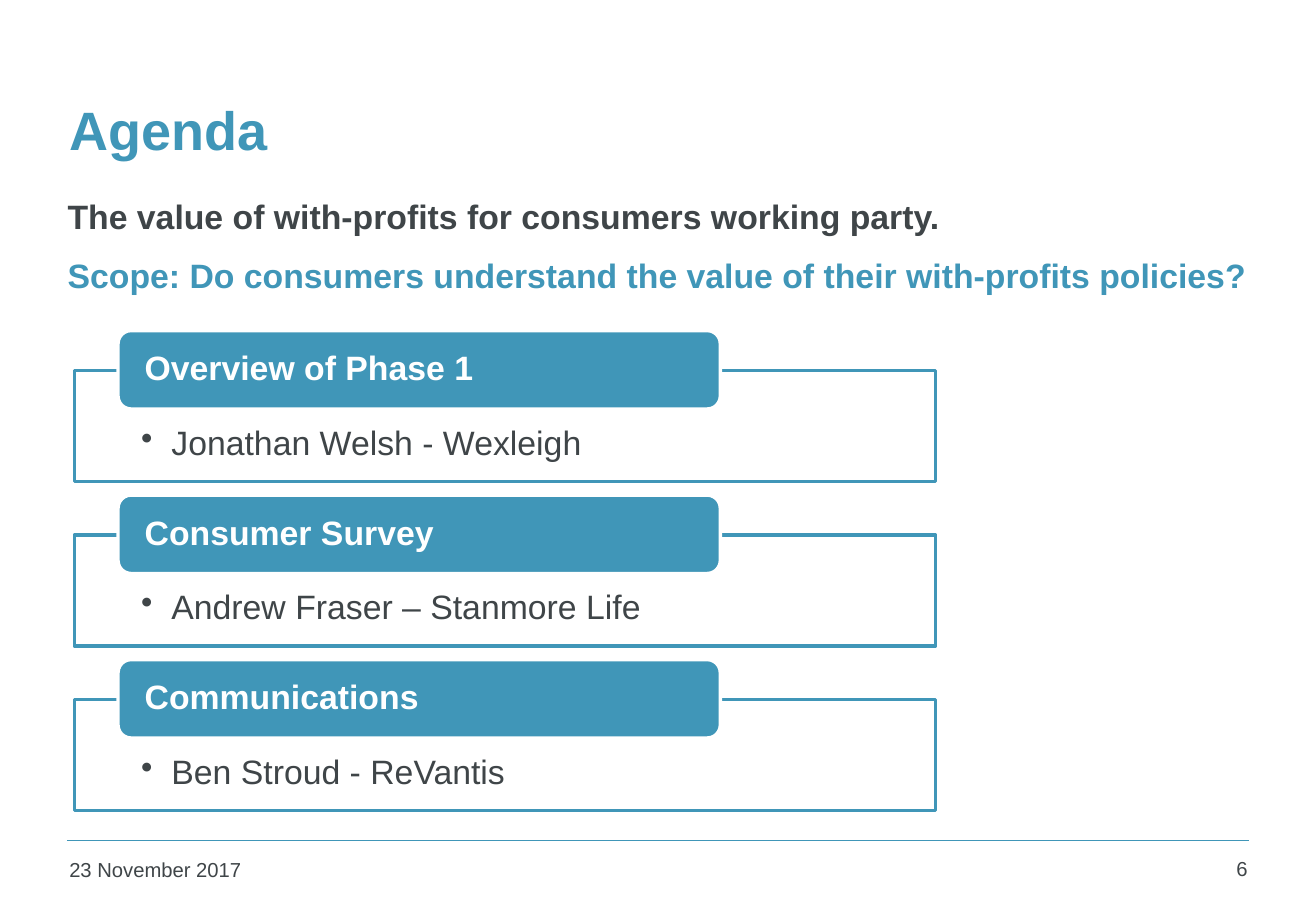
from dataclasses import dataclass

from lxml import etree
from pptx import Presentation
from pptx.dml.color import RGBColor
from pptx.enum.shapes import MSO_CONNECTOR, MSO_SHAPE
from pptx.enum.text import MSO_ANCHOR, PP_ALIGN
from pptx.oxml.ns import qn
from pptx.util import Pt

LINE = MSO_CONNECTOR.STRAIGHT
RECT, ROUND_RECT = MSO_SHAPE.RECTANGLE, MSO_SHAPE.ROUNDED_RECTANGLE
TOP, MIDDLE = MSO_ANCHOR.TOP, MSO_ANCHOR.MIDDLE
LEFT, RIGHT = PP_ALIGN.LEFT, PP_ALIGN.RIGHT


@dataclass(frozen=True)
class Theme:
    font: str = "Arial"
    accent: RGBColor = RGBColor(0x40, 0x96, 0xB8)
    ink: RGBColor = RGBColor(0x3F, 0x45, 0x48)
    white: RGBColor = RGBColor(0xFF, 0xFF, 0xFF)
    title: int = 32
    body: int = 20
    footer: int = 12


def add_text(tf, text, *, theme, size, color, bold=False, align=LEFT,
             before=0, spacing=1.0, bullet_indent=0, first=True):
    p = tf.paragraphs[0] if first else tf.add_paragraph()
    p.alignment = align
    p.space_before = Pt(before)
    p.line_spacing = spacing
    if bullet_indent:
        pPr = p._p.get_or_add_pPr()
        pPr.set("marL", str(Pt(bullet_indent)))
        pPr.set("indent", str(-Pt(bullet_indent)))
        etree.SubElement(pPr, qn("a:buChar"), char="•")
    r = p.add_run()
    r.text = text
    r.font.name = theme.font
    r.font.size = Pt(size)
    r.font.bold = bold
    r.font.color.rgb = color


class SlideBuilder:
    def __init__(self, slide, theme):
        self.s = slide
        self.theme = theme

    def frame(self, sp, insets, anchor):
        tf = sp.text_frame
        tf.word_wrap = True
        tf.vertical_anchor = anchor
        tf.margin_left, tf.margin_top, tf.margin_right, tf.margin_bottom = map(Pt, insets)
        return tf

    def text_box(self, x, y, w, h, paragraphs, anchor=TOP):
        sp = self.s.shapes.add_textbox(Pt(x), Pt(y), Pt(w), Pt(h))
        tf = self.frame(sp, (7.2, 3.6, 7.2, 3.6), anchor)
        for i, (text, fmt) in enumerate(paragraphs):
            add_text(tf, text, theme=self.theme, first=i == 0, **fmt)

    def box(self, kind, x, y, w, h, fill, line, text, insets, anchor, **fmt):
        sp = self.s.shapes.add_shape(kind, Pt(x), Pt(y), Pt(w), Pt(h))
        sp.shadow.inherit = False
        sp.fill.solid()
        sp.fill.fore_color.rgb = fill
        sp.line.color.rgb = line
        sp.line.width = Pt(2)
        tf = self.frame(sp, insets, anchor)
        add_text(tf, text, theme=self.theme, size=self.theme.body, spacing=0.9, **fmt)

    def rule(self, x1, x2, y):
        cn = self.s.shapes.add_connector(LINE, Pt(x1), Pt(y), Pt(x2), Pt(y))
        cn.line.color.rgb = self.theme.accent
        cn.line.width = Pt(1)
        etree.SubElement(cn._element.spPr, qn("a:effectLst"))

    def agenda_item(self, y, heading, speaker):
        t = self.theme
        self.box(RECT, 44, y + 23.6, 510.5, 65.8, t.white, t.accent, speaker,
                 (39.6, 33, 39.6, 11.5), TOP, color=t.ink, bullet_indent=18)
        self.box(ROUND_RECT, 70, y, 357, 46.5, t.accent, t.white, heading,
                 (13.5, 0, 13.5, 0), MIDDLE, color=t.white, bold=True)


def main():
    prs = Presentation()
    prs.slide_width, prs.slide_height = Pt(780), Pt(540)
    t = Theme()
    b = SlideBuilder(prs.slides.add_slide(prs.slide_layouts[6]), t)

    b.rule(39.6, 740.2, 498.2)
    b.text_box(34, 31.7, 707, 90, [
        ("Agenda", dict(size=t.title, color=t.accent, bold=True)),
    ], anchor=MIDDLE)
    b.text_box(33, 112.5, 720, 67.7, [
        ("The value of with-profits for consumers working party.",
         dict(size=t.body, color=t.ink, bold=True)),
        ("Scope: Do consumers understand the value of their with-profits policies?",
         dict(size=t.body, color=t.accent, bold=True, before=11)),
    ])

    agenda = [
        ("Overview of Phase 1", "Jonathan Welsh - Wexleigh"),
        ("Consumer Survey", "Andrew Fraser – Stanmore Life"),
        ("Communications", "Ben Stroud - ReVantis"),
    ]
    for i, (heading, speaker) in enumerate(agenda):
        b.agenda_item(196 + i * 97.5, heading, speaker)

    footer = dict(size=t.footer, color=t.ink)
    b.text_box(34, 504.7, 172, 26, [("23 November 2017", footer)])
    b.text_box(691, 504, 55.5, 26.5, [("6", dict(footer, align=RIGHT))])

    prs.save("out.pptx")


if __name__ == "__main__":
    main()
